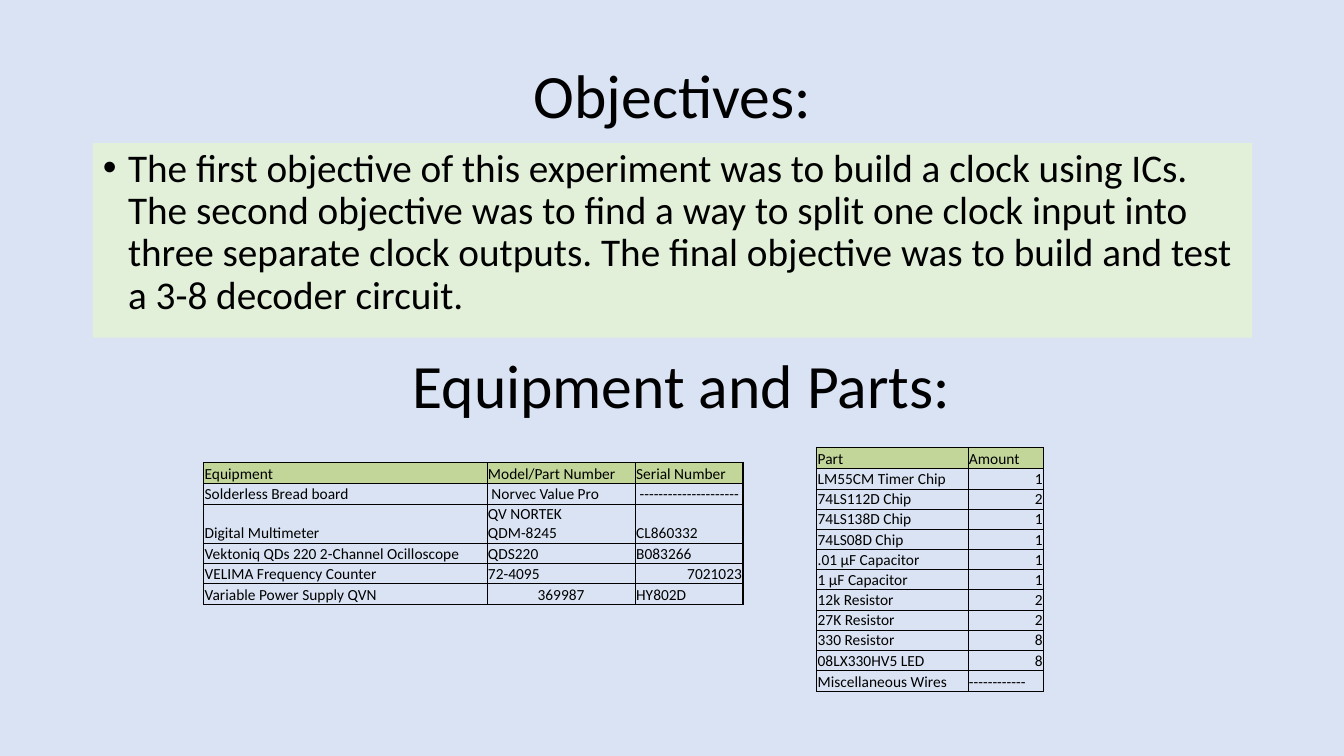
from lxml.etree import SubElement
from pptx import Presentation
from pptx.dml.color import RGBColor
from pptx.enum.text import MSO_ANCHOR, MSO_AUTO_SIZE, PP_ALIGN
from pptx.oxml import parse_xml
from pptx.oxml.ns import nsdecls, qn
from pptx.util import Inches, Pt

TITLE = "Objectives:"
OBJECTIVES = (
    "The first objective of this experiment was to build a clock using ICs. "
    "The second objective was to find a way to split one clock input into "
    "three separate clock outputs. The final objective was to build and test "
    "a 3-8 decoder circuit."
)
SUBTITLE = "Equipment and Parts:"
EQUIPMENT = [
    ("Equipment", "Model/Part Number", "Serial Number"),
    ("Solderless Bread board", " Norvec Value Pro", " ---------------------"),
    ("Digital Multimeter", "QV NORTEK QDM-8245", "CL860332"),
    ("Vektoniq QDs 220 2-Channel Ocilloscope", "QDS220", "B083266"),
    ("VELIMA Frequency Counter", "72-4095", 7021023),
    ("Variable Power Supply QVN", "369987", "HY802D"),
]
PARTS = [
    ("Part", "Amount"),
    ("LM55CM Timer Chip", 1),
    ("74LS112D Chip", 2),
    ("74LS138D Chip", 1),
    ("74LS08D Chip", 1),
    (".01 μF Capacitor", 1),
    ("1 μF Capacitor", 1),
    ("12k Resistor", 2),
    ("27K Resistor", 2),
    ("330 Resistor", 8),
    ("08LX330HV5 LED", 8),
    ("Miscellaneous Wires", "------------"),
]
TABLES = [
    (EQUIPMENT, 2.02, 4.59, (2.81, 1.47, 1.07)),
    (PARTS, 8.1, 4.44, (1.5, 0.75)),
]
CENTERED = {"369987"}

FONT = "Calibri"
BLACK = RGBColor(0x00, 0x00, 0x00)
SKY = RGBColor(0xDA, 0xE3, 0xF3)
MINT = RGBColor(0xE2, 0xF0, 0xD9)
OLIVE = RGBColor(0xC2, 0xD6, 0x9A)


def format_text(p, size):
    for r in p.runs:
        r.font.name = FONT
        r.font.size = Pt(size)
        r.font.bold = False
        r.font.color.rgb = BLACK


def place_text(sp, text, left, top, width, height, size, anchor, align):
    sp.left, sp.top = Inches(left), Inches(top)
    sp.width, sp.height = Inches(width), Inches(height)
    tf = sp.text_frame
    tf.text = text
    tf.word_wrap = True
    tf.auto_size = MSO_AUTO_SIZE.NONE
    tf.vertical_anchor = anchor
    p = tf.paragraphs[0]
    p.alignment = align
    p.line_spacing = 0.9
    format_text(p, size)
    return p


def set_borders(cell, widths):
    tcPr = cell._tc.get_or_add_tcPr()
    for i, (side, width) in enumerate(widths.items()):
        tcPr.insert(i, parse_xml(
            f'<a:ln{side} {nsdecls("a")} w="{Pt(width)}"><a:solidFill>'
            f'<a:srgbClr val="{BLACK}"/></a:solidFill></a:ln{side}>'))


def add_grid(slide, rows, left, top, widths):
    last_row, last_col = len(rows) - 1, len(widths) - 1
    heights = [0.21 if i in (0, last_row) else 0.2 for i in range(len(rows))]
    table = slide.shapes.add_table(
        len(rows), len(widths), Inches(left), Inches(top),
        Inches(sum(widths)), Inches(sum(heights))).table
    table.first_row = table.horz_banding = False
    for col, width in zip(table.columns, widths):
        col.width = Inches(width)
    for i, row in enumerate(rows):
        table.rows[i].height = Inches(heights[i])
        for j, value in enumerate(row):
            cell = table.cell(i, j)
            cell.text = str(value)
            cell.vertical_anchor = MSO_ANCHOR.BOTTOM
            cell.margin_left = cell.margin_right = cell.margin_top = Inches(0.01)
            cell.margin_bottom = 0
            p = cell.text_frame.paragraphs[0]
            if isinstance(value, int):
                p.alignment = PP_ALIGN.RIGHT
            elif value in CENTERED:
                p.alignment = PP_ALIGN.CENTER
            format_text(p, 11)
            if i == 0:
                cell.fill.solid()
                cell.fill.fore_color.rgb = OLIVE
            else:
                cell.fill.background()
            set_borders(cell, {
                "L": 1 if j == 0 else 0.5,
                "R": 1 if j == last_col else 0.5,
                "T": 1 if i <= 1 else 0.5,
                "B": 1 if i in (0, last_row) else 0.5,
            })


def main():
    """Build the objectives and equipment slide."""
    prs = Presentation()
    prs.slide_width, prs.slide_height = Inches(13.33), Inches(7.5)
    slide = prs.slides.add_slide(prs.slide_layouts[1])
    slide.background.fill.solid()
    slide.background.fill.fore_color.rgb = SKY

    place_text(slide.shapes.title, TITLE, 0.92, 0.25, 11.5, 1.45, 44,
               MSO_ANCHOR.MIDDLE, PP_ALIGN.CENTER)

    body = slide.placeholders[1]
    body.fill.solid()
    body.fill.fore_color.rgb = MINT
    p = place_text(body, OBJECTIVES, 0.92, 1.42, 11.5, 1.93, 28,
                   MSO_ANCHOR.TOP, PP_ALIGN.LEFT)
    p.space_before = Pt(10)
    pPr = p._p.get_or_add_pPr()
    pPr.set("marL", str(Inches(0.25)))
    pPr.set("indent", str(-Inches(0.25)))
    SubElement(pPr, qn("a:buFont"), typeface="Arial")
    SubElement(pPr, qn("a:buChar"), char="•")

    place_text(slide.shapes.add_textbox(0, 0, 0, 0), SUBTITLE, 1.01, 3.13, 11.5, 1.45, 44,
               MSO_ANCHOR.MIDDLE, PP_ALIGN.CENTER)

    for rows, left, top, widths in TABLES:
        add_grid(slide, rows, left, top, widths)

    prs.save("out.pptx")


if __name__ == "__main__":
    main()
